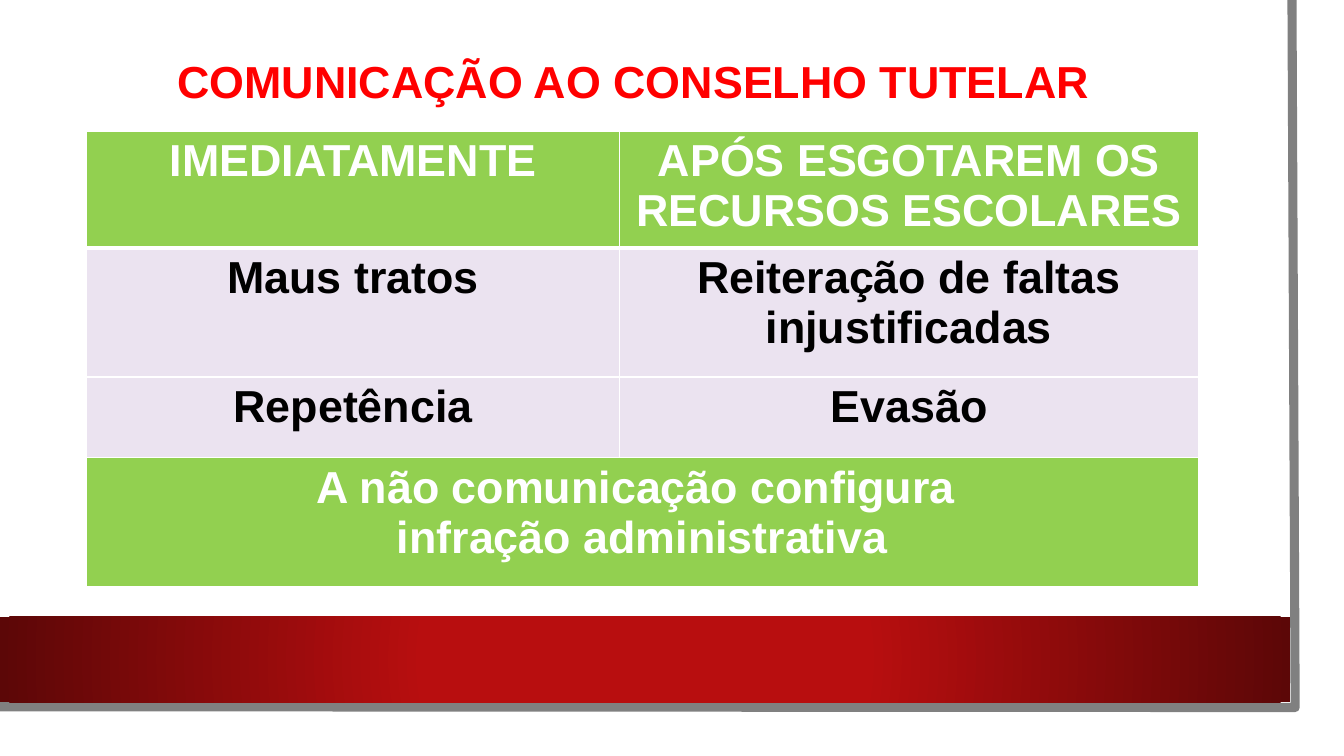
from lxml.etree import SubElement
from pptx import Presentation
from pptx.dml.color import RGBColor
from pptx.enum.shapes import MSO_SHAPE
from pptx.enum.text import MSO_AUTO_SIZE, PP_ALIGN
from pptx.oxml import parse_xml
from pptx.oxml.ns import nsdecls, qn
from pptx.util import Cm, Pt

TITLE = "COMUNICAÇÃO AO CONSELHO TUTELAR "
ROWS = [
    ("IMEDIATAMENTE", "APÓS ESGOTAREM OS RECURSOS ESCOLARES"),
    ("Maus tratos", "Reiteração de faltas injustificadas"),
    ("Repetência", "Evasão"),
    ("A não comunicação configura \ninfração administrativa", ""),
]
HUES = {"white": "FFFFFF", "black": "000000", "title": "FF0000", "green": "92D050",
        "lilac": "EBE3F0", "edge": "808080", "red": "B80E0F", "wine": "5C0707"}
FONT = {"name": "Arial", "size": Pt(32), "bold": True}
WIDTHS = (13.44, 14.58)
HEIGHTS = (2.95, 3.25, 2.03, 3.25)
LEFT, TOP = 2.18, 3.3
EDGE = [(32.56, 0), (32.64, 17.83), (-0.08, 17.81)]


def color(name):
    return RGBColor.from_string(HUES[name])


def write(frame, text, hue):
    frame.text = text
    for para in frame.paragraphs:
        para.alignment = PP_ALIGN.CENTER
        for run in para.runs:
            for key, value in FONT.items():
                setattr(run.font, key, value)
            run.font.color.rgb = color(hue)


def panel(left, top, width, height):
    shape = slide.shapes.add_shape(
        MSO_SHAPE.RECTANGLE, Cm(left), Cm(top), Cm(width), Cm(height))
    shape.shadow.inherit = False
    shape.line.fill.background()
    shape.fill.solid()
    shape.fill.fore_color.rgb = color("white")
    return shape


def border(cell, base):
    props = cell._tc.get_or_add_tcPr()
    for side in "LRTB":
        width = Pt(base if side == "B" else 1)
        line = SubElement(props, qn("a:ln" + side), w=str(width))
        fill = SubElement(line, qn("a:solidFill"))
        SubElement(fill, qn("a:srgbClr"), val=HUES["white"])


deck = Presentation()
deck.slide_width, deck.slide_height = Cm(33.87), Cm(19.05)
slide = deck.slides.add_slide(deck.slide_layouts[6])

panel(0, 0, 33.27, 18.47)

points = [(Cm(x), Cm(y)) for x, y in EDGE]
pen = slide.shapes.build_freeform(*points[0])
pen.add_line_segments(points[1:], close=False)
edge = pen.convert_to_shape()
edge.shadow.inherit = False
edge.fill.background()
edge.line.color.rgb = color("edge")
edge.line.width = Pt(6.5)

band = panel(0, 15.54, 32.51, 2.16)
solid = band._element.spPr.find(qn("a:solidFill"))
stops = "".join(f'<a:gs pos="{at}"><a:srgbClr val="{HUES[hue]}"/></a:gs>'
                for at, hue in ((34000, "red"), (100000, "wine")))
solid.getparent().replace(solid, parse_xml(
    f'<a:gradFill {nsdecls("a")} rotWithShape="1"><a:gsLst>{stops}</a:gsLst>'
    '<a:path path="circle"><a:fillToRect l="50000" t="50000" r="50000" b="50000"/>'
    '</a:path></a:gradFill>'))

table = slide.shapes.add_table(
    len(ROWS), len(WIDTHS), Cm(LEFT), Cm(TOP),
    Cm(sum(WIDTHS)), Cm(sum(HEIGHTS))).table
for col, width in zip(table.columns, WIDTHS):
    col.width = Cm(width)
for row, height in zip(table.rows, HEIGHTS):
    row.height = Cm(height)
last = len(ROWS) - 1
table.cell(last, 0).merge(table.cell(last, 1))
for r, texts in enumerate(ROWS):
    back, ink = ("green", "white") if r in (0, last) else ("lilac", "black")
    for c, text in enumerate(texts):
        cell = table.cell(r, c)
        border(cell, 3 if r == 0 else 1)
        cell.fill.solid()
        cell.fill.fore_color.rgb = color(back)
        if text:
            write(cell.text_frame, text, ink)

title = slide.shapes.add_textbox(Cm(LEFT), Cm(1.22), Cm(27.89), Cm(1.63)).text_frame
title.word_wrap = True
title.auto_size = MSO_AUTO_SIZE.SHAPE_TO_FIT_TEXT
write(title, TITLE, "title")

deck.save("out.pptx")
